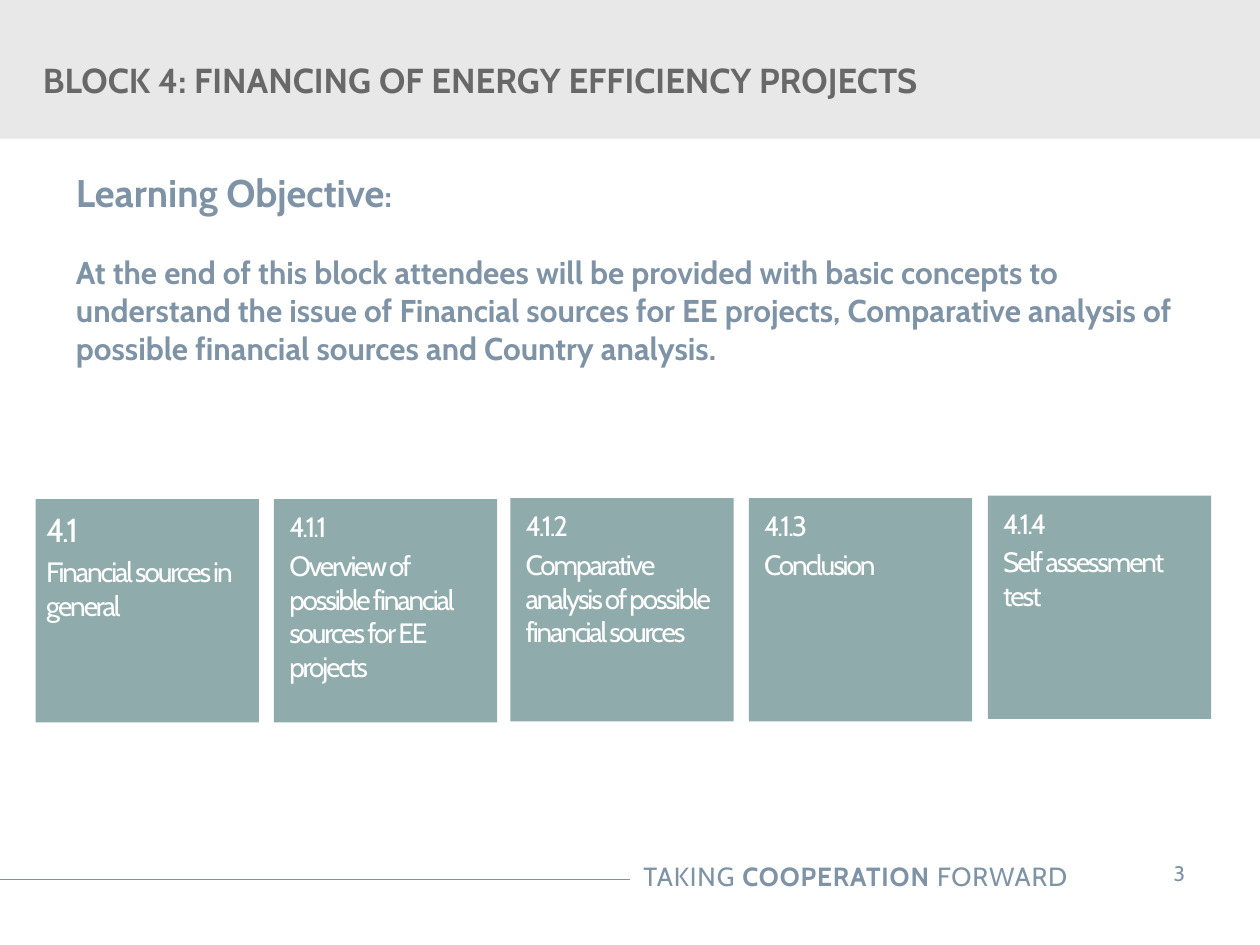
from pptx import Presentation
from pptx.dml.color import RGBColor
from pptx.enum.shapes import MSO_CONNECTOR as Connector, MSO_SHAPE as Shape
from pptx.enum.text import MSO_ANCHOR as Anchor, MSO_AUTO_SIZE as AutoSize, PP_ALIGN as Align
from pptx.oxml.ns import qn
from pptx.util import Pt
from lxml import etree

FONT = "Cabin"
BLUE_GREY = RGBColor(0x7E, 0x93, 0xA5)
DARK_GREY = RGBColor(0x68, 0x68, 0x68)
LIGHT_GREY = RGBColor(0xE8, 0xE8, 0xE8)
TEAL = RGBColor(0x90, 0xAB, 0xAB)
WHITE = RGBColor(0xFF, 0xFF, 0xFF)


def set_frame(shape, left, top, right, bottom, anchor=Anchor.TOP):
    """Set the insets, anchor and wrapping of a shape's text and return its frame."""
    frame = shape.text_frame
    frame.margin_left, frame.margin_top = Pt(left), Pt(top)
    frame.margin_right, frame.margin_bottom = Pt(right), Pt(bottom)
    frame.vertical_anchor = anchor
    frame.word_wrap = True
    frame.auto_size = AutoSize.NONE
    return frame


def write(paragraph, texts, size, color, bold=False, align=Align.LEFT, spacing=0):
    """Fill a paragraph with runs in one font; spacing is between letters, in points."""
    for text in texts:
        run = paragraph.add_run()
        run.text = text
        if spacing:
            run.font._element.set("spc", str(round(spacing * 100)))
    paragraph.alignment = align
    font = paragraph.font
    font.name, font.size, font.bold = FONT, Pt(size), bold
    font.color.rgb = color


presentation = Presentation()
presentation.slide_width, presentation.slide_height = Pt(720), Pt(540)
slide = presentation.slides.add_slide(presentation.slide_layouts[5])
shapes = slide.shapes

# Title on its grey band
title = shapes.title
title.left, title.top, title.width, title.height = Pt(0), Pt(18.7), Pt(556), Pt(54)
frame = set_frame(title, 24.5, 3.6, 7.2, 3.6, Anchor.MIDDLE)
write(frame.paragraphs[0], ["BLOCK 4: FINANCING OF ENERGY EFFICIENCY PROJECTS"],
      19.8, DARK_GREY, bold=True)

band = shapes.add_shape(Shape.RECTANGLE, Pt(0), Pt(0), Pt(720), Pt(79.2))
band.shadow.inherit = False
band.fill.solid()
band.fill.fore_color.rgb = LIGHT_GREY
band.line.fill.background()
title.element.addprevious(band.element)

# Footer
rule = shapes.add_connector(Connector.STRAIGHT, Pt(0), Pt(502.6), Pt(360), Pt(502.6))
rule.line.color.rgb = BLUE_GREY
rule.line.width = Pt(0.75)
etree.SubElement(rule.element.spPr, qn("a:effectLst"))

tagline = shapes.add_textbox(Pt(279.4), Pt(488.2), Pt(337.7), Pt(25.2))
paragraph = set_frame(tagline, 7.2, 3.6, 7.2, 3.6).paragraphs[0]
write(paragraph, ["TAKING ", "COOPERATION", " FORWARD"], 15, BLUE_GREY,
      align=Align.RIGHT, spacing=0.5)
paragraph.runs[1].font.bold = True

page_number = shapes.add_textbox(Pt(647.3), Pt(484.6), Pt(53.3), Pt(28.8))
frame = set_frame(page_number, 14.4, 7.2, 14.4, 7.2)
write(frame.paragraphs[0], ["3"], 12, BLUE_GREY, align=Align.CENTER)

# Learning objective
objective = shapes.add_textbox(Pt(37.4), Pt(93.6), Pt(658.8), Pt(138.2))
frame = set_frame(objective, 6, 3, 6, 3)
heading = frame.paragraphs[0]
write(heading, ["Learning Objective", ":"], 22, BLUE_GREY, bold=True)
heading.runs[1].font.size = Pt(18)
body = frame.add_paragraph()
body.space_before = Pt(21.6)
write(body, ["At the end of this block attendees will be provided with basic concepts to "
             "understand the issue of Financial sources for EE projects, Comparative "
             "analysis of possible financial sources and Country analysis."],
      18, BLUE_GREY, bold=True)

# Section tiles: left, top, left inset, number size, number, name
TILE_SIDE = 127.6
TILES = [
    (20.4, 285.2, 6, 19, "4.1", "Financial sources in general"),
    (156.5, 285.2, 8.8, 16, "4.1.1", "Overview of possible financial sources for EE projects"),
    (291.6, 284.7, 8.8, 16, "4.1.2", "Comparative analysis of possible financial sources"),
    (427.9, 284.7, 8.8, 16, "4.1.3", "Conclusion"),
    (564.5, 283.2, 8.8, 16, "4.1.4", "Self assessment test"),
]
for left, top, inset, number_size, number, name in TILES:
    tile = shapes.add_shape(Shape.RECTANGLE, Pt(left), Pt(top), Pt(TILE_SIDE), Pt(TILE_SIDE))
    tile.shadow.inherit = False
    tile.fill.solid()
    tile.fill.fore_color.rgb = TEAL
    tile.line.fill.background()
    frame = set_frame(tile, inset, 6, 0 if number == "4.1" else 8.8, 8.8)
    write(frame.paragraphs[0], [number], number_size, WHITE, spacing=-1.2)
    paragraph = frame.add_paragraph()
    paragraph.space_before = Pt(3)
    write(paragraph, [name], 16, WHITE, spacing=-1.2)

presentation.save("out.pptx")
